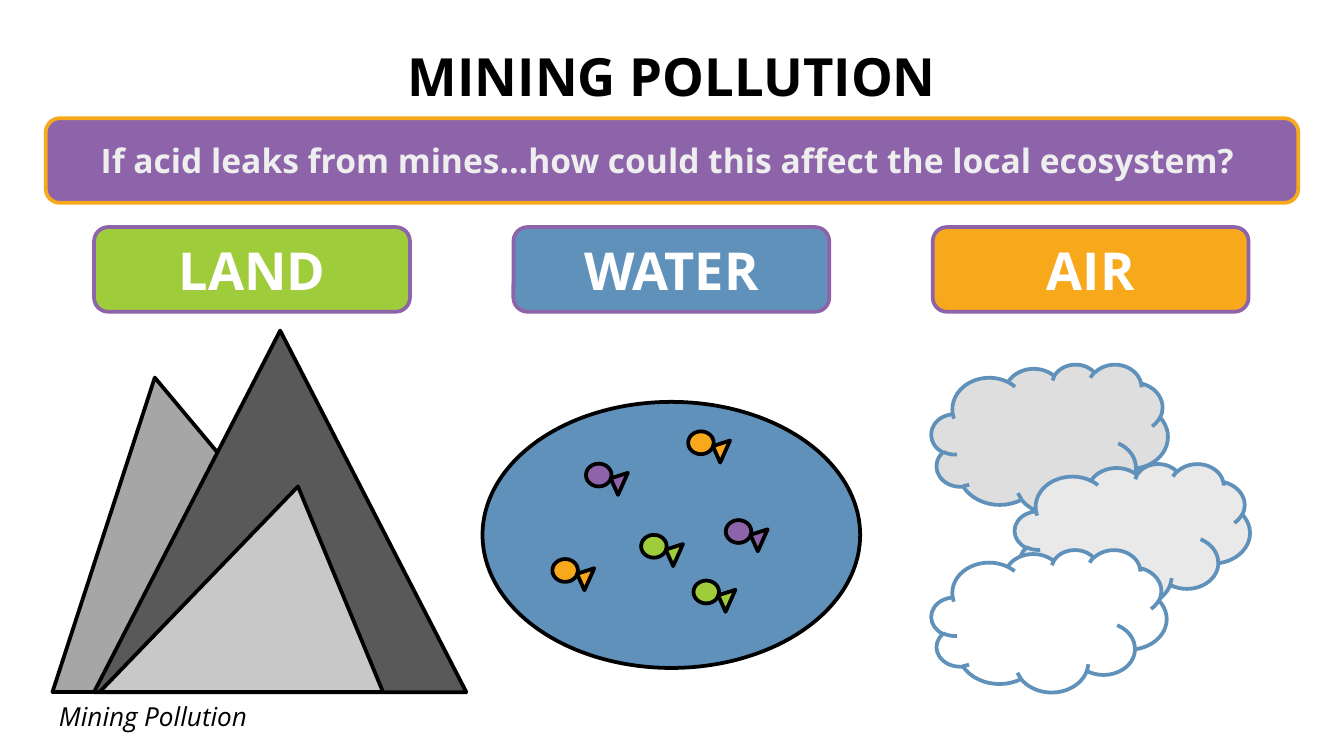
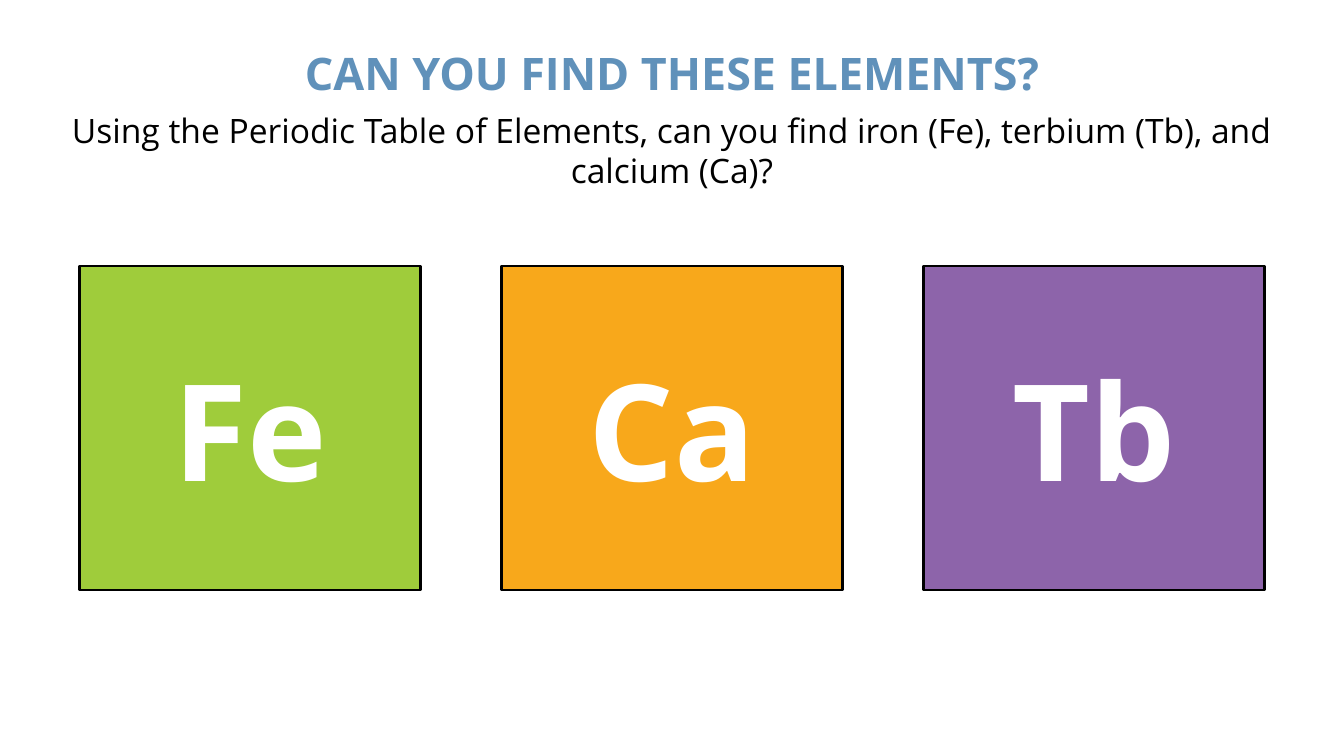
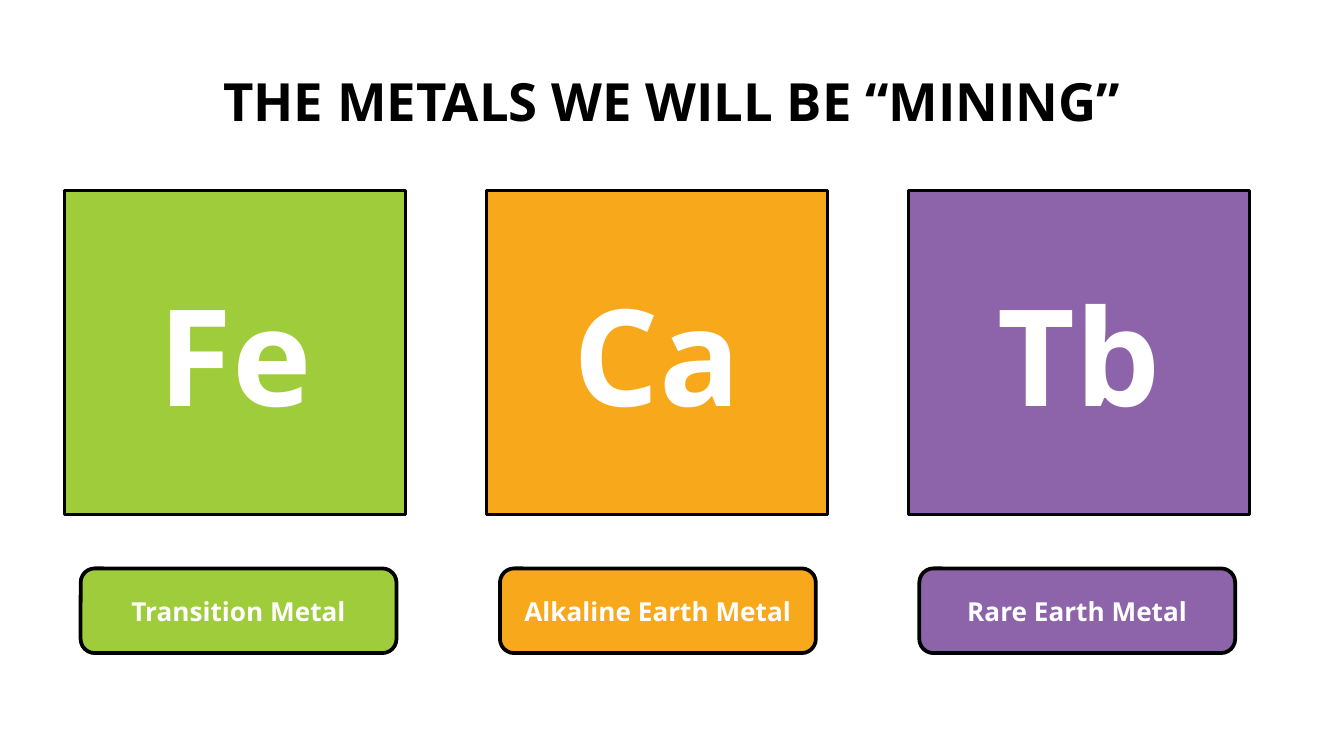
from pptx import Presentation
from pptx import util as u
from pptx.dml import color
from pptx.enum import shapes, text

FONT = "Open Sans"
BLACK = "000000"
WHITE = "FFFFFF"
GREEN = "9FCC3B"
ORANGE = "F8A81B"
PURPLE = "8D64AA"
BLUE = "6091BA"
KIND = shapes.MSO_SHAPE
ELEMENTS = [("Fe", GREEN), ("Ca", ORANGE), ("Tb", PURPLE)]


def rgb(value):
    return color.RGBColor.from_string(value)


def write(paragraph, content, size=18, ink=BLACK, bold=False, italic=False,
          align=text.PP_ALIGN.CENTER, before=0):
    paragraph.alignment = align
    paragraph.space_before = u.Pt(before)
    run = paragraph.add_run()
    run.text = content
    run.font.name = FONT
    run.font.size = u.Pt(size)
    run.font.bold = bold
    run.font.italic = italic
    run.font.color.rgb = rgb(ink)


def add_figure(parent, kind, left, top, width, height, fill, line=BLACK,
               weight=2, peak=None, rotation=0):
    shape = parent.shapes.add_shape(
        kind, u.Inches(left), u.Inches(top), u.Inches(width), u.Inches(height))
    shape.shadow.inherit = False
    shape.fill.solid()
    shape.fill.fore_color.rgb = rgb(fill)
    shape.line.color.rgb = rgb(line)
    shape.line.width = u.Pt(weight)
    shape.rotation = rotation
    if peak is not None:
        shape.adjustments[0] = peak
    return shape


def add_label(parent, kind, box, fill, content, line=BLACK, weight=2, **style):
    shape = add_figure(parent, kind, *box, fill, line, weight)
    frame = shape.text_frame
    frame.word_wrap = True
    frame.vertical_anchor = text.MSO_ANCHOR.MIDDLE
    write(frame.paragraphs[0], content, **style)


def place_title(slide, left, top, width, height, margin_top=0):
    title = slide.shapes.title
    title.left, title.top = u.Inches(left), u.Inches(top)
    title.width, title.height = u.Inches(width), u.Inches(height)
    frame = title.text_frame
    frame.word_wrap = True
    frame.auto_size = text.MSO_AUTO_SIZE.NONE
    frame.vertical_anchor = text.MSO_ANCHOR.MIDDLE
    frame.margin_left = frame.margin_right = u.Inches(0.1)
    frame.margin_top, frame.margin_bottom = u.Inches(margin_top), 0
    return frame


def add_title(slide, content, top):
    frame = place_title(slide, 0.34, top, 9.32, 0.63, margin_top=0.05)
    write(frame.paragraphs[0], content, size=28.2, bold=True)


def add_buttons(slide, buttons, left, top, pitch, size, line=BLACK):
    group = slide.shapes.add_group_shape()
    for column, (content, fill) in enumerate(buttons):
        box = (left + column * pitch, top, 2.35, 0.63)
        add_label(group, KIND.ROUNDED_RECTANGLE, box, fill, content, line,
                  size=size, ink=WHITE, bold=True)


def add_element_tiles(slide, left, top):
    group = slide.shapes.add_group_shape()
    for column, (symbol, fill) in enumerate(ELEMENTS):
        box = (left + column * 3.14, top, 2.54, 2.41)
        add_label(group, KIND.RECTANGLE, box, fill, symbol, weight=1.5,
                  size=72, ink=WHITE, bold=True)


def add_fish(slide, left, top, fill):
    group = slide.shapes.add_group_shape()
    add_figure(group, KIND.OVAL, left, top, 0.19, 0.17, fill)
    add_figure(group, KIND.ISOSCELES_TRIANGLE, left + 0.14, top + 0.08,
               0.18, 0.1, fill, rotation=294.1)


def add_mountains(slide):
    for left, top, width, height, fill, peak in [
        (0.39, 2.81, 2.72, 2.34, "A6A6A6", 0.28),
        (0.7, 2.46, 2.77, 2.69, "595959", 0.5),
        (0.74, 3.62, 2.11, 1.53, "C8C8C8", 0.7),
    ]:
        add_figure(slide, KIND.ISOSCELES_TRIANGLE, left, top, width, height,
                   fill, peak=peak)


def add_clouds(slide):
    for left, top, width, height, fill in [
        (6.93, 2.71, 1.76, 1.11, "DEDEDE"),
        (7.55, 3.45, 1.75, 1.06, "E9E9E9"),
        (6.93, 4.09, 1.75, 1.06, WHITE),
    ]:
        add_figure(slide, KIND.CLOUD, left, top, width, height, fill, BLUE)


def add_pond(slide):
    add_figure(slide, KIND.OVAL, 3.59, 2.99, 2.81, 1.98, BLUE)
    for left, top, fill in [
        (4.36, 3.45, PURPLE), (5.4, 3.87, PURPLE), (4.11, 4.16, ORANGE),
        (5.16, 4.32, GREEN), (5.12, 3.21, ORANGE), (4.77, 3.98, GREEN),
    ]:
        add_fish(slide, left, top, fill)


def build_pollution(slide):
    add_title(slide, "MINING POLLUTION", 0.22)
    add_label(slide, KIND.ROUNDED_RECTANGLE, (0.34, 0.88, 9.32, 0.63), PURPLE,
              "If acid leaks from mines…how could this affect the local ecosystem? ",
              ORANGE, ink="EEEEEE", bold=True)
    add_mountains(slide)
    add_buttons(slide, [("LAND", GREEN), ("WATER", BLUE), ("AIR", ORANGE)],
                0.7, 1.69, 3.12, 28, PURPLE)
    add_clouds(slide)
    add_pond(slide)
    add_label(slide, KIND.RECTANGLE, (0.34, 5.23, 4.55, 0.2), WHITE,
              "Mining Pollution", WHITE, size=14, italic=True,
              align=text.PP_ALIGN.LEFT)


def build_search(slide):
    frame = place_title(slide, 0, 0, 10, 1.76)
    write(frame.paragraphs[0], "CAN YOU FIND THESE ELEMENTS?", size=24,
          ink=BLUE, bold=True)
    write(frame.add_paragraph(),
          "Using the Periodic Table of Elements, can you find iron (Fe), "
          "terbium (Tb), and calcium (Ca)?", before=5.5)
    add_element_tiles(slide, 0.59, 1.98)


def build_metals(slide):
    add_element_tiles(slide, 0.48, 1.42)
    add_buttons(slide, [("Transition Metal", GREEN),
                        ("Alkaline Earth Metal", ORANGE),
                        ("Rare Earth Metal", PURPLE)], 0.6, 4.23, 3.12, 14)
    add_title(slide, "THE METALS WE WILL BE “MINING”", 0.41)


def main():
    presentation = Presentation()
    presentation.slide_width = u.Inches(10)
    presentation.slide_height = presentation.slide_width * 9 // 16
    title_only = presentation.slide_layouts[5]
    for build in (build_pollution, build_search, build_metals):
        build(presentation.slides.add_slide(title_only))
    presentation.save("out.pptx")


if __name__ == "__main__":
    main()
